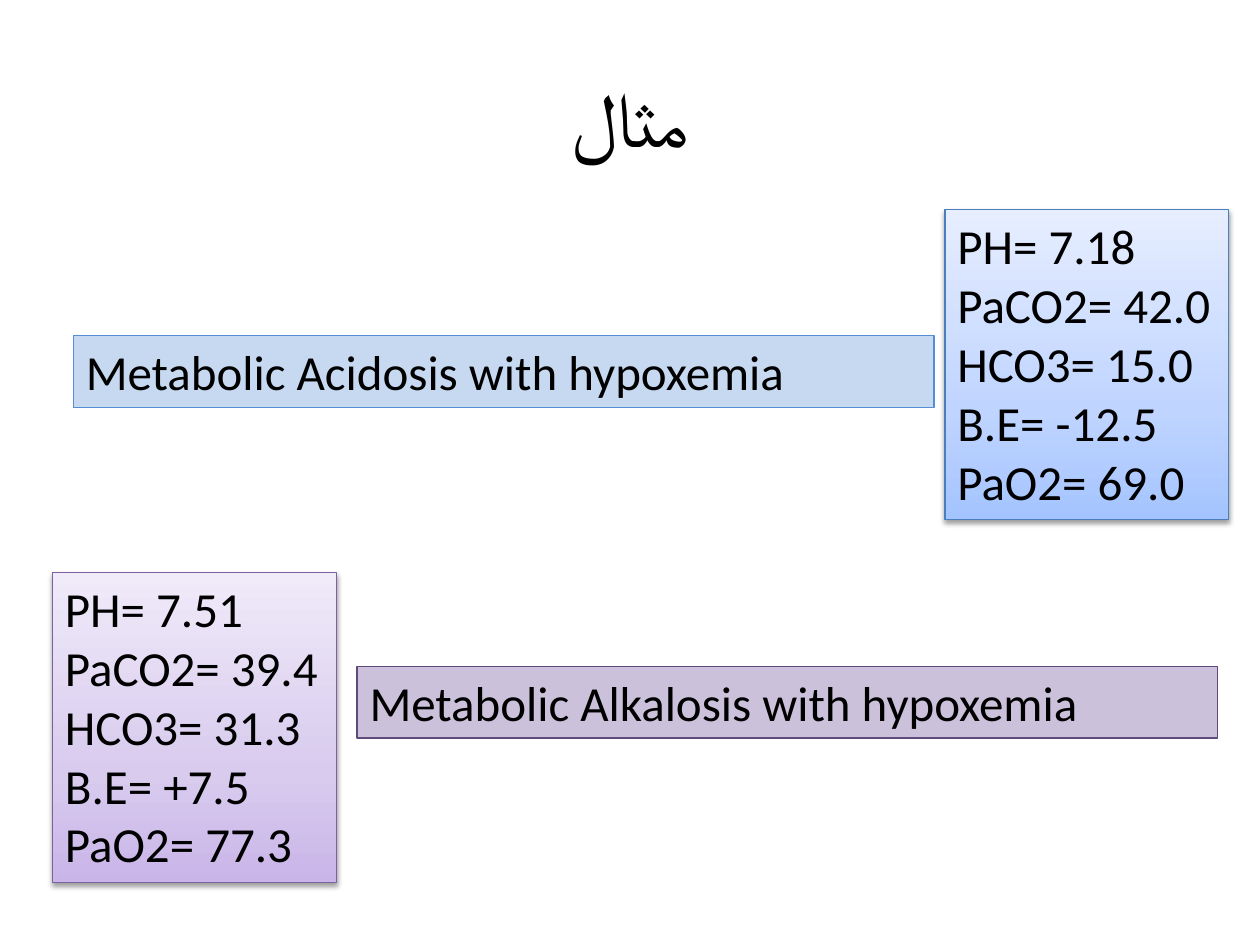
from lxml import etree
from pptx import Presentation
from pptx import util as u
from pptx.dml import color
from pptx.enum import shapes, text
from pptx.oxml import ns


def rgb(hex_code):
    """Turn a hex string into a colour."""
    return color.RGBColor.from_string(hex_code)


def write_lines(frame, lines, size, align=text.PP_ALIGN.LEFT):
    """Write one paragraph per line in black Calibri."""
    frame.word_wrap = True
    frame.text = "\n".join(lines)
    for paragraph in frame.paragraphs:
        paragraph.alignment = align
        paragraph.font.name = "Calibri"
        paragraph.font.size = u.Pt(size)
        paragraph.font.color.rgb = rgb("000000")


def add_title(slide, wording):
    """Add the centred heading."""
    heading = slide.shapes.add_textbox(u.Cm(1.27), u.Cm(0.76), u.Cm(22.86), u.Cm(3.18))
    heading.text_frame.vertical_anchor = text.MSO_ANCHOR.MIDDLE
    write_lines(heading.text_frame, [wording], 44, text.PP_ALIGN.CENTER)


def add_panel(slide, left, top, width, height, border, lines):
    """Add an outlined rectangle with left-aligned text."""
    panel = slide.shapes.add_shape(
        shapes.MSO_SHAPE.RECTANGLE, u.Cm(left), u.Cm(top), u.Cm(width), u.Cm(height))
    panel.shadow.inherit = False
    panel.line.color.rgb = rgb(border)
    panel.line.width = u.Pt(0.75)
    panel.text_frame.vertical_anchor = text.MSO_ANCHOR.TOP
    write_lines(panel.text_frame, lines, 28)
    return panel


def add_diagnosis(slide, left, top, fill, border, wording):
    """Add a flat bar that names the diagnosis."""
    diagnosis = add_panel(slide, left, top, 17.35, 1.45, border, [wording])
    diagnosis.fill.solid()
    diagnosis.fill.fore_color.rgb = rgb(fill)


def add_blood_gas(slide, left, top, shades, border, readings):
    """Add a shaded, shadowed card of blood gas readings."""
    card = add_panel(slide, left, top, 5.72, 6.25, border,
                     [f"{measure}= {value}" for measure, value in readings.items()])
    card.fill.gradient()
    card.fill.gradient_angle = 90
    properties = card._element.spPr
    stops = properties.find(ns.qn("a:gradFill")).find(ns.qn("a:gsLst"))
    for stop in list(stops):
        stops.remove(stop)
    for position, shade in zip((0, 35, 100), shades):
        stop = etree.SubElement(stops, ns.qn("a:gs"), pos=str(position * 1000))
        etree.SubElement(stop, ns.qn("a:srgbClr"), val=shade)
    shadow = etree.SubElement(
        properties.find(ns.qn("a:effectLst")), ns.qn("a:outerShdw"),
        blurRad=str(u.Pt(3.1)), dist=str(u.Pt(1.6)), dir="5400000", rotWithShape="0")
    tint = etree.SubElement(shadow, ns.qn("a:srgbClr"), val="000000")
    etree.SubElement(tint, ns.qn("a:alpha"), val="38000")


def main():
    """Build the slide with two blood gas examples."""
    deck = Presentation()
    deck.slide_width, deck.slide_height = u.Cm(25.4), u.Cm(19.05)
    slide = deck.slides.add_slide(deck.slide_layouts[6])
    add_title(slide, "مثال")
    add_blood_gas(slide, 1.06, 11.54, ("C9B5E8", "D8CBEE", "F0EAF9"), "7D60A0",
                  {"PH": "7.51", "PaCO2": "39.4", "HCO3": "31.3", "B.E": "+7.5", "PaO2": "77.3"})
    add_diagnosis(slide, 7.2, 13.43, "CCC1DA", "604A7B", "Metabolic Alkalosis with hypoxemia")
    add_blood_gas(slide, 19.05, 4.23, ("A4C4FF", "BFD4FF", "E6EEFF"), "4B7EBC",
                  {"PH": "7.18", "PaCO2": "42.0", "HCO3": "15.0", "B.E": "-12.5", "PaO2": "69.0"})
    add_diagnosis(slide, 1.48, 6.77, "C6D9F1", "558ED5", "Metabolic Acidosis with hypoxemia")
    deck.save("out.pptx")


if __name__ == "__main__":
    main()
